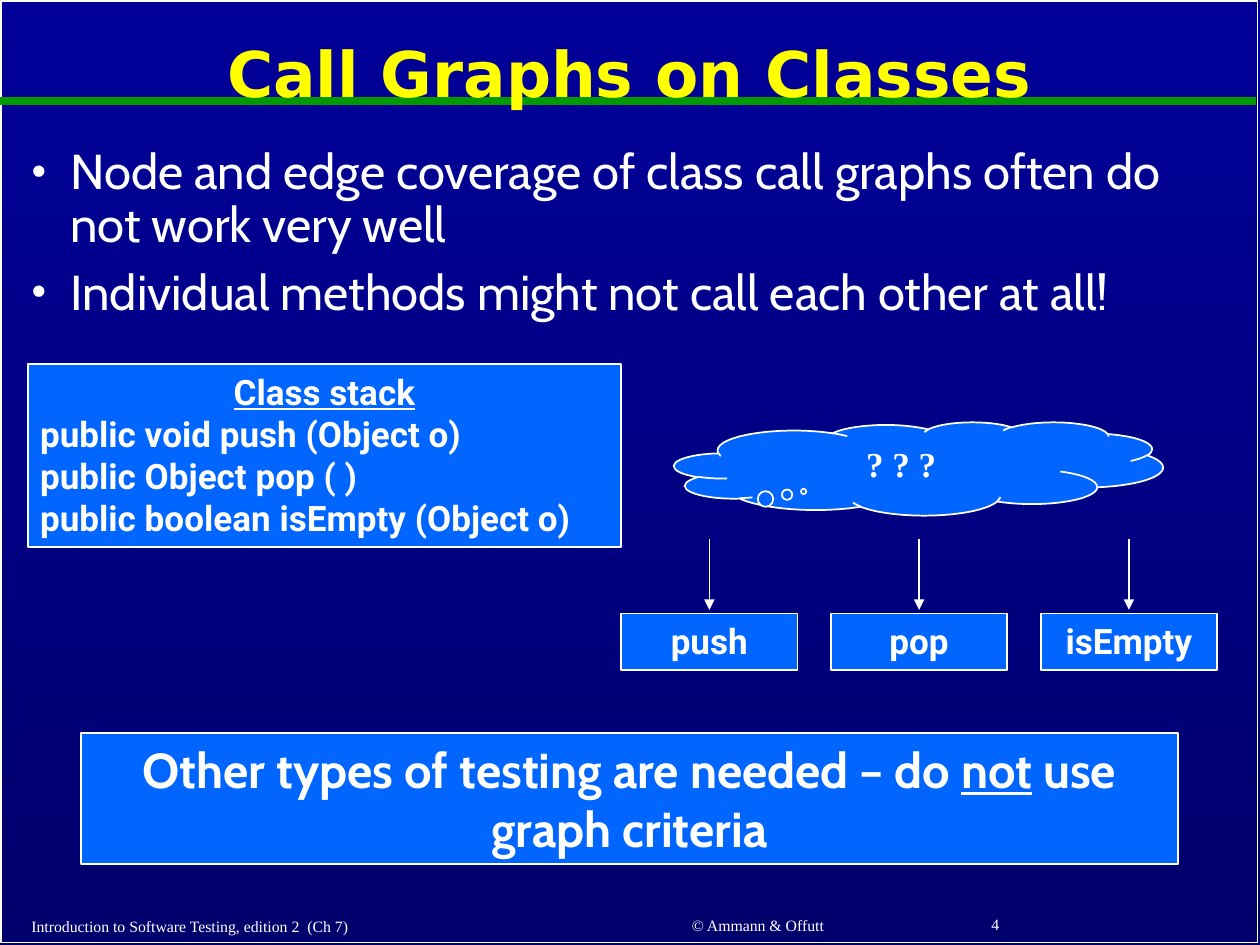
from lxml import etree
from pptx import Presentation
from pptx import util as u
from pptx.dml.color import RGBColor
from pptx.enum import shapes, text
from pptx.oxml.ns import qn

NIGHT_TOP = RGBColor(0x00, 0x00, 0x99)
NIGHT_BOTTOM = RGBColor(0x00, 0x00, 0x6D)
WHITE = RGBColor(0xFF, 0xFF, 0xFF)
YELLOW = RGBColor(0xFF, 0xFF, 0x00)
GREEN = RGBColor(0x00, 0x99, 0x00)
BLUE = RGBColor(0x00, 0x66, 0xFF)

COLUMNS, ROWS = 100, 75
LEFT, CENTER = text.PP_ALIGN.LEFT, text.PP_ALIGN.CENTER
TOP, MIDDLE = text.MSO_ANCHOR.TOP, text.MSO_ANCHOR.MIDDLE


class SlideBuilder:
    """Holds the style and the current slide; lengths are grid columns and rows."""

    heading, prose, code, serif = "DejaVu Sans", "Cabin", "Roboto", "Times New Roman"

    def __init__(self, deck):
        self.page = deck.slides.add_slide(deck.slide_layouts[1])
        self.column = deck.slide_width / COLUMNS
        self.row = deck.slide_height / ROWS

    def place(self, left, top, width, height):
        return (u.Emu(round(left * self.column)), u.Emu(round(top * self.row)),
                u.Emu(round(width * self.column)), u.Emu(round(height * self.row)))

    def background(self, first, last):
        fill = self.page.background.fill
        fill.gradient()
        fill.gradient_angle = 270
        for stop, color in zip(fill.gradient_stops, (first, last)):
            stop.color.rgb = color

    def span(self, para, words, font, size, color=WHITE, bold=False, underline=False):
        span = para.add_run()
        span.text = words
        span.font.name, span.font.size = font, u.Pt(size)
        span.font.bold, span.font.underline = bold, underline
        span.font.color.rgb = color

    def typeset(self, box, paras, font, size, anchor=TOP, **style):
        """Each paragraph is (alignment, [(words, underlined), ...])."""
        frame = box.text_frame
        frame.word_wrap = True
        frame.vertical_anchor = anchor
        for index, (align, spans) in enumerate(paras):
            para = frame.add_paragraph() if index else frame.paragraphs[0]
            para.alignment = align
            for words, underline in spans:
                self.span(para, words, font, size, underline=underline, **style)
        return frame

    def placeholder(self, index, area, paras, font, size, **style):
        box = self.page.placeholders[index]
        box.left, box.top, box.width, box.height = self.place(*area)
        tree = box.element.getparent()
        tree.append(box.element)  # in front of what is already drawn
        frame = self.typeset(box, paras, font, size, **style)
        frame.auto_size = text.MSO_AUTO_SIZE.NONE
        for para in frame.paragraphs:
            para.line_spacing = 0.9
        return frame

    def title(self, area, words):
        self.placeholder(0, area, [(CENTER, [(words, False)])], self.heading, 36,
                         anchor=MIDDLE, color=YELLOW, bold=True)

    def bullets(self, area, items):
        paras = [(LEFT, [(item, False)]) for item in items]
        frame = self.placeholder(1, area, paras, self.prose, 28)
        indent = u.Inches(0.31)
        for para in frame.paragraphs:
            props = para._p.get_or_add_pPr()
            props.set("marL", str(indent))
            props.set("indent", str(-indent))
            before = etree.SubElement(props, qn("a:spcBef"))
            etree.SubElement(before, qn("a:spcPct"), val="30000")
            etree.SubElement(props, qn("a:buSzPct"), val="85000")
            etree.SubElement(props, qn("a:buChar"), char="•")

    def shape(self, kind, area, fill=BLUE):
        box = self.page.shapes.add_shape(kind, *self.place(*area))
        box.shadow.inherit = False
        box.line.color.rgb, box.line.width = WHITE, u.Pt(1)
        if fill is None:
            box.fill.background()
        else:
            box.fill.solid()
            box.fill.fore_color.rgb = fill
        return box

    def panel(self, area, paras, font, size):
        box = self.shape(shapes.MSO_SHAPE.RECTANGLE, area)
        frame = self.typeset(box, paras, font, size, bold=True)
        frame.auto_size = text.MSO_AUTO_SIZE.SHAPE_TO_FIT_TEXT

    def cloud(self, area, words, tail):
        box = self.shape(shapes.MSO_SHAPE.CLOUD_CALLOUT, area)
        box.adjustments[0], box.adjustments[1] = tail
        self.typeset(box, [(CENTER, [(words, False)])], self.serif, 20, bold=True)

    def line(self, start, end, color=WHITE, width=1, arrow=False):
        link = self.page.shapes.add_connector(
            shapes.MSO_CONNECTOR.STRAIGHT, *self.place(*start, *end))
        link.line.color.rgb, link.line.width = color, u.Pt(width)
        if arrow:
            etree.SubElement(link.line._get_or_add_ln(), qn("a:tailEnd"), type="triangle")
        etree.SubElement(link._element.spPr, qn("a:effectLst"))

    def footer(self, area, words, align=LEFT):
        box = self.page.shapes.add_textbox(*self.place(*area))
        self.typeset(box, [(align, [(words, False)])], self.serif, 9, anchor=MIDDLE)


def main():
    deck = Presentation()
    deck.slide_width, deck.slide_height = u.Inches(10), u.Inches(7.5)
    slide = SlideBuilder(deck)

    # Backdrop: gradient, frame and rule under the title
    slide.background(NIGHT_TOP, NIGHT_BOTTOM)
    slide.shape(shapes.MSO_SHAPE.RECTANGLE, (0.1, 0.1, 99.7, 74.7), fill=None)
    slide.line((0, 8), (99.7, 8), GREEN, 4.5)

    # Title and list
    slide.title((1.3, 1.1, 97.3, 10), "Call Graphs on Classes")
    slide.bullets((1.5, 11.2, 97, 17), [
        "Node and edge coverage of class call graphs often do not work very well",
        "Individual methods might not call each other at all!",
    ])

    # Class with its methods
    methods = ["public void push (Object o)", "public Object pop ( )",
               "public boolean isEmpty (Object o)"]
    slide.panel((2.2, 28.9, 47.1, 14.5),
                [(CENTER, [("Class stack", True)])]
                + [(LEFT, [(method, False)]) for method in methods],
                slide.code, 20)

    # Conclusion
    slide.panel((6.4, 58.2, 87.1, 10.4),
                [(CENTER, [("Other types of testing are needed – do ", False),
                           ("not", True), (" use graph criteria", False)])],
                slide.prose, 28)

    # Call graph: an unknown caller above evenly spaced methods
    node_width, pitch = 14, 16.65
    for index, name in enumerate(["push", "pop", "isEmpty"]):
        left = 49.3 + index * pitch
        middle = left + node_width / 2
        slide.panel((left, 48.7, node_width, 4.5),
                    [(CENTER, [(name, False)])], slide.code, 20)
        slide.line((middle, 42.8), (middle, 48.4), arrow=True)
    slide.cloud((53.5, 33.5, 38.8, 7.4), "? ? ?", tail=(-0.235, 0.244))

    # Footer
    slide.footer((1.5, 72.2, 41.1, 2.6), "Introduction to Software Testing, edition 2  (Ch 7)")
    slide.footer((44.3, 72.1, 31.7, 2.6), "© Ammann & Offutt", CENTER)
    slide.footer((77.7, 72, 20.8, 2.7), "4")

    deck.save("out.pptx")


if __name__ == "__main__":
    main()
